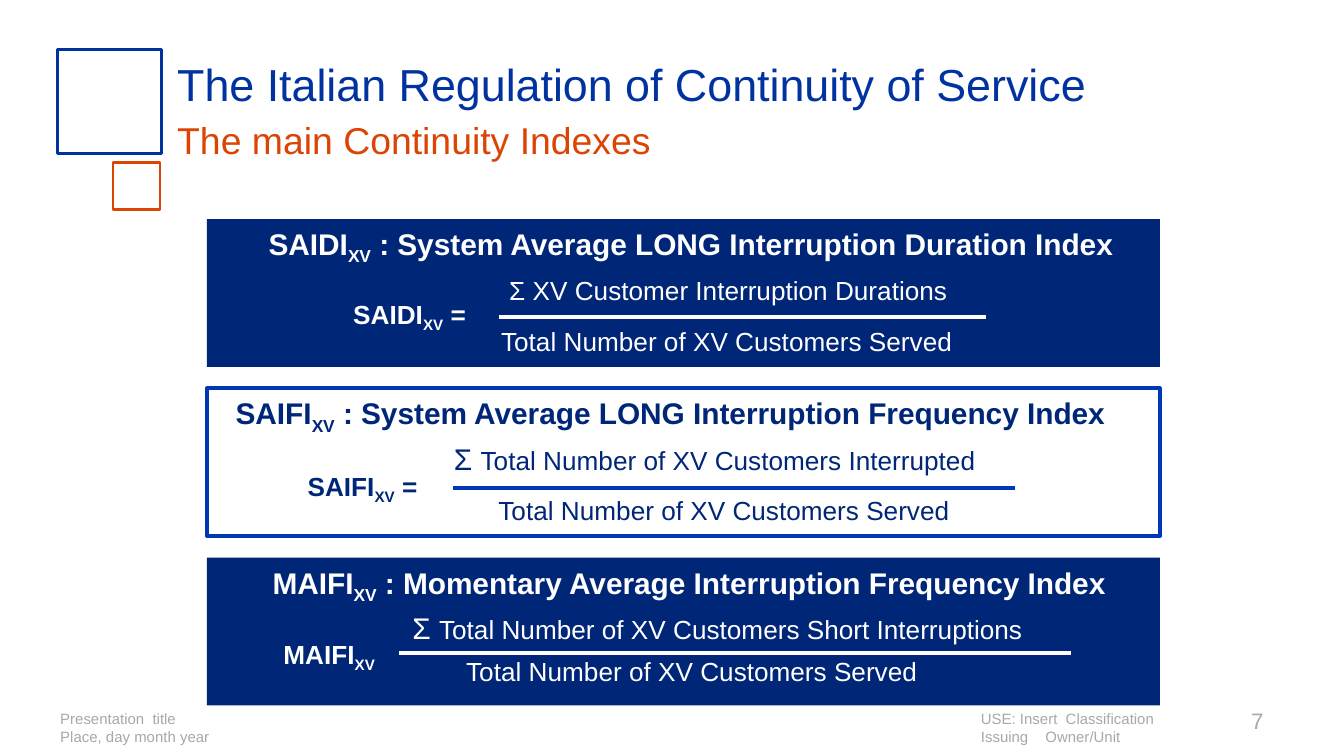
from dataclasses import dataclass

from lxml import etree
from pptx import Presentation
from pptx import util as u
from pptx.dml.color import RGBColor
from pptx.enum import shapes, text
from pptx.oxml import ns

IN = u.Inches


@dataclass(frozen=True)
class Theme:
    font: str = "Arial"
    blue: str = "0033A0"
    navy: str = "002678"
    edge: str = "0038B4"
    orange: str = "DC4405"
    white: str = "FFFFFF"
    grey: str = "A7A8AA"
    pale: str = "A8A9AD"
    title: int = 24
    sub: int = 20
    head: int = 16
    body: int = 14
    page: int = 12
    foot: int = 8


@dataclass(frozen=True)
class Index:
    """One index; places are offsets from the panel's corner."""
    name: str
    sign: str
    full: str
    top: str
    sigma: int
    head: tuple
    label: tuple
    over: tuple
    rule: tuple
    under: tuple
    solid: bool = True


T = Theme()
SERVED = "Total Number of XV Customers Served"
PANELS = [
    Index("SAIDI", " =", "System Average LONG Interruption Duration Index",
          "XV Customer Interruption Durations", T.body,
          (0.36, 0, 6.6), (0.99, 0.54, 1.07), (2.15, 0.36, 3.48),
          (2.17, 0.73, 3.63), (2.09, 0.74, 3.58)),
    Index("SAIFI", " =", "System Average LONG Interruption Frequency Index",
          "Total Number of XV Customers Interrupted", T.head,
          (0.06, 0, 6.78), (0.65, 0.56, 1.05), (1.74, 0.34, 4.1),
          (1.83, 0.74, 4.18), (2.07, 0.74, 3.58), False),
    Index("MAIFI", "", "Momentary Average Interruption Frequency Index",
          "Total Number of XV Customers Short Interruptions", T.head,
          (0.39, 0, 6.51), (0.47, 0.55, 1.08), (1.43, 0.34, 4.76),
          (1.43, 0.71, 5), (1.83, 0.68, 3.58)),
]


def rgb(tone):
    return RGBColor.from_string(tone)


def style(para, size, tone, bold=False):
    font = para.font
    font.name, font.size, font.bold = T.font, u.Pt(size), bold
    font.color.rgb = rgb(tone)


def write(slide, box, lines, size, tone, bold=False, wrap=True,
          align=text.PP_ALIGN.LEFT):
    """Place a text box; return its paragraphs."""
    frame = slide.shapes.add_textbox(*map(IN, box)).text_frame
    frame.word_wrap = wrap
    for i, line in enumerate(lines):
        para = frame.add_paragraph() if i else frame.paragraphs[0]
        if line:
            para.add_run().text = line
        para.alignment = align
        style(para, size, tone, bold)
    return frame.paragraphs


def indexed(para, name, tail):
    """Write a name with its XV subscript, then the tail."""
    para.add_run().text = name
    sub = para.add_run()
    sub.text = "XV"
    sub.font._element.set("baseline", "-25000")
    if tail:
        para.add_run().text = tail


def rect(slide, box, fill=None, line=None, width=1.5):
    shape = slide.shapes.add_shape(shapes.MSO_SHAPE.RECTANGLE, *map(IN, box))
    shape.shadow.inherit = False
    if fill:
        shape.fill.solid()
        shape.fill.fore_color.rgb = rgb(fill)
    else:
        shape.fill.background()
    if line:
        shape.line.color.rgb = rgb(line)
        shape.line.width = u.Pt(width)
    else:
        shape.line.fill.background()


def rule(slide, x, y, w, tone):
    bar = slide.shapes.add_connector(
        shapes.MSO_CONNECTOR.STRAIGHT, IN(x), IN(y), IN(x + w), IN(y))
    bar.line.color.rgb = rgb(tone)
    bar.line.width = u.Pt(2.25)
    etree.SubElement(bar._element.spPr, ns.qn("a:effectLst"))


def header(slide, x, y):
    # Two corner squares
    rect(slide, (x, y, 0.77, 0.77), line=T.blue)
    rect(slide, (x + 0.41, y + 0.84, 0.35, 0.35), line=T.orange)
    # Title and subtitle
    write(slide, (x + 0.79, y, 7.02, 0.39),
          ["The Italian Regulation of Continuity of Service"],
          T.title, T.blue)
    sub = write(slide, (x + 0.79, y + 0.4, 8.32, 0.39),
                ["The main Continuity Indexes"], T.sub, T.orange)[0]
    sub.line_spacing = u.Pt(28)


def panel(slide, box, item):
    x, y = box[:2]
    tone = T.white if item.solid else T.navy
    if item.solid:
        rect(slide, box, fill=T.navy)
    else:
        rect(slide, box, line=T.edge, width=2)

    def put(spot, high, line, size, **kind):
        dx, dy, w = spot
        return write(slide, (x + dx, y + dy, w, high), [line],
                     size, tone, **kind)[0]

    # Heading
    side = text.PP_ALIGN.LEFT if item.solid else text.PP_ALIGN.CENTER
    head = put(item.head, 0.37, "", T.head, bold=True, wrap=False, align=side)
    indexed(head, item.name, " : " + item.full)
    # Formula: label, numerator, bar, denominator
    label = put(item.label, 0.34, "", T.body, bold=True)
    indexed(label, item.name, item.sign)
    over = put(item.over, 0.37, "Σ ", T.body, wrap=False)
    over.runs[0].font.size = u.Pt(item.sigma)
    over.add_run().text = item.top
    dx, dy, w = item.rule
    rule(slide, x + dx, y + dy, w, tone if item.solid else T.edge)
    put(item.under, 0.34, SERVED, T.body, wrap=False)


def footer(slide, x, y):
    write(slide, (x, y, 3.94, 0.3),
          ["Presentation  title", "Place, day month year"], T.foot, T.grey)
    # Classification and owner, the owner set at a tab stop
    unit = write(slide, (x + 6.85, y, 2.68, 0.37),
                 ["USE: Insert  Classification", "Issuing\tOwner/Unit"],
                 T.foot, T.grey)[1]
    tabs = etree.Element(ns.qn("a:tabLst"))
    etree.SubElement(tabs, ns.qn("a:tab"), pos=str(IN(0.48)), algn="l")
    unit._p.get_or_add_pPr().insert(0, tabs)
    # Page number
    write(slide, (x + 8.59, y - 0.02, 0.56, 0.3), ["7"], T.page, T.pale,
          align=text.PP_ALIGN.RIGHT)


def main():
    deck = Presentation()
    deck.slide_width, deck.slide_height = IN(10), u.Pt(405)
    slide = deck.slides.add_slide(deck.slide_layouts[6])
    header(slide, 0.43, 0.37)
    for i, item in enumerate(PANELS):
        panel(slide, (1.54, 1.63 + 1.26 * i, 7.09, 1.1), item)
    footer(slide, 0.35, 5.23)
    deck.save("out.pptx")


if __name__ == "__main__":
    main()
